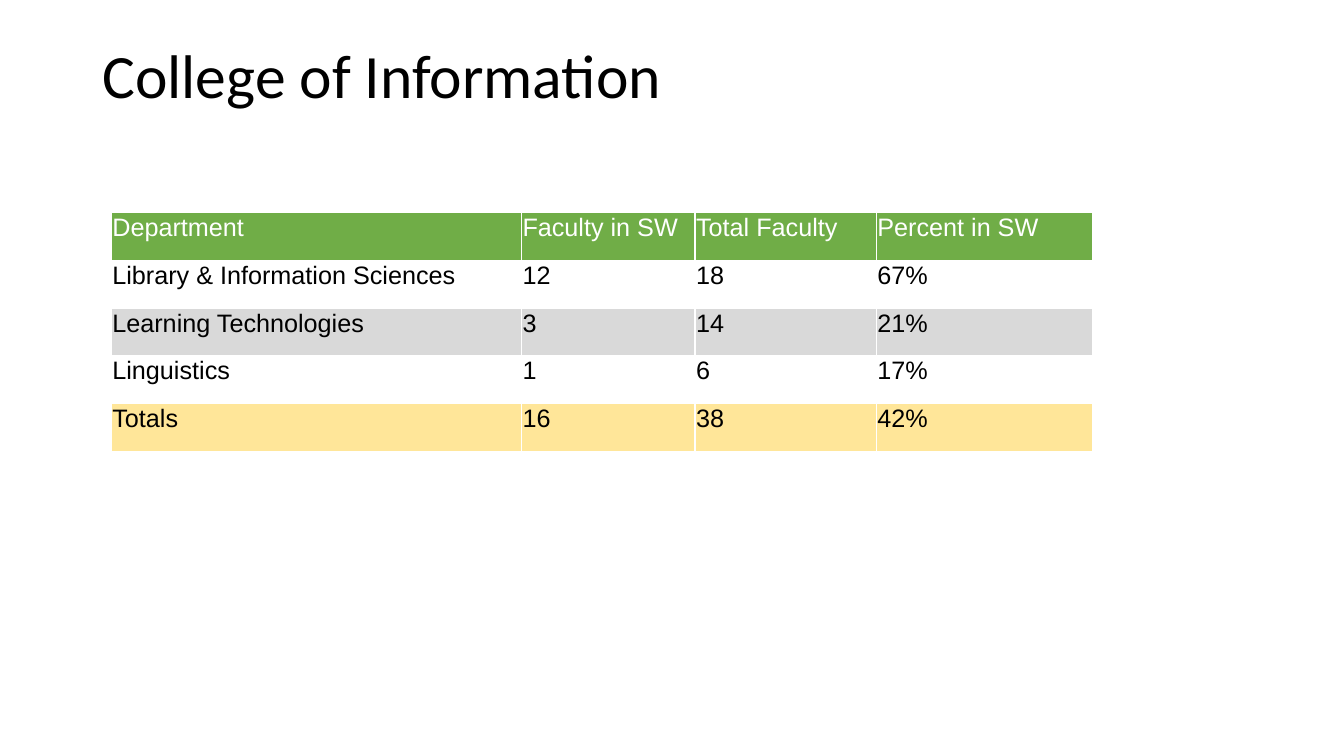
from lxml import etree
from pptx import Presentation
from pptx.dml.color import RGBColor
from pptx.enum.text import MSO_ANCHOR, PP_ALIGN
from pptx.oxml.ns import qn
from pptx.util import Pt

TOP = MSO_ANCHOR.TOP
LEFT = PP_ALIGN.LEFT
TITLE_ONLY = 5

WHITE, BLACK = "FFFFFF", "000000"
GREEN, GREY, YELLOW = "70AD47", "D9D9D9", "FFE699"

ROWS = [
    ("Department", "Faculty in SW", "Total Faculty", "Percent in SW"),
    ("Library & Information Sciences", "12", "18", "67%"),
    ("Learning Technologies", "3", "14", "21%"),
    ("Linguistics", "1", "6", "17%"),
    ("Totals", "16", "38", "42%"),
]
ROW_FILLS = [GREEN, WHITE, GREY, WHITE, YELLOW]
COLUMN_WIDTHS = [293, 124, 129.5, 154.5]
ROW_HEIGHT = 34.1
CELL_FORMAT = {
    "margin_left": Pt(0.75),
    "margin_right": Pt(0.75),
    "margin_top": Pt(0.75),
    "margin_bottom": 0,
    "vertical_anchor": TOP,
}


def style_text(para, font_name, size, color):
    para.alignment = LEFT
    font = para.runs[0].font
    font.name, font.size, font.bold = font_name, Pt(size), False
    font.color.rgb = RGBColor.from_string(color)


def add_borders(cell, color, width):
    properties = cell._tc.get_or_add_tcPr()
    for side in ("lnL", "lnR", "lnT", "lnB"):
        line = etree.SubElement(properties, qn(f"a:{side}"), w=str(Pt(width)))
        fill = etree.SubElement(line, qn("a:solidFill"))
        etree.SubElement(fill, qn("a:srgbClr"), val=color)


deck = Presentation()
deck.slide_width, deck.slide_height = Pt(960), Pt(540)
page = deck.slides.add_slide(deck.slide_layouts[TITLE_ONLY])

title = page.shapes.title
title.left, title.top, title.width, title.height = Pt(66), Pt(28.8), Pt(828), Pt(104.4)
title.text_frame.text = "College of Information"
title.text_frame.vertical_anchor = TOP
title_para = title.text_frame.paragraphs[0]
title_para.line_spacing = 0.9
style_text(title_para, "Calibri", 44, BLACK)

table = page.shapes.add_table(
    len(ROWS), len(COLUMN_WIDTHS), Pt(79.5), Pt(152),
    Pt(sum(COLUMN_WIDTHS)), Pt(ROW_HEIGHT * len(ROWS)),
).table
table.first_row = table.horz_banding = False
for column, width in zip(table.columns, COLUMN_WIDTHS):
    column.width = Pt(width)

for row, texts, fill_color in zip(table.rows, ROWS, ROW_FILLS):
    row.height = Pt(ROW_HEIGHT)
    text_color = WHITE if fill_color == GREEN else BLACK
    for cell, text in zip(row.cells, texts):
        cell.text = text
        for name, value in CELL_FORMAT.items():
            setattr(cell, name, value)
        style_text(cell.text_frame.paragraphs[0], "Arial", 18, text_color)
        add_borders(cell, WHITE, 1)
        cell.fill.solid()
        cell.fill.fore_color.rgb = RGBColor.from_string(fill_color)

deck.save("out.pptx")
